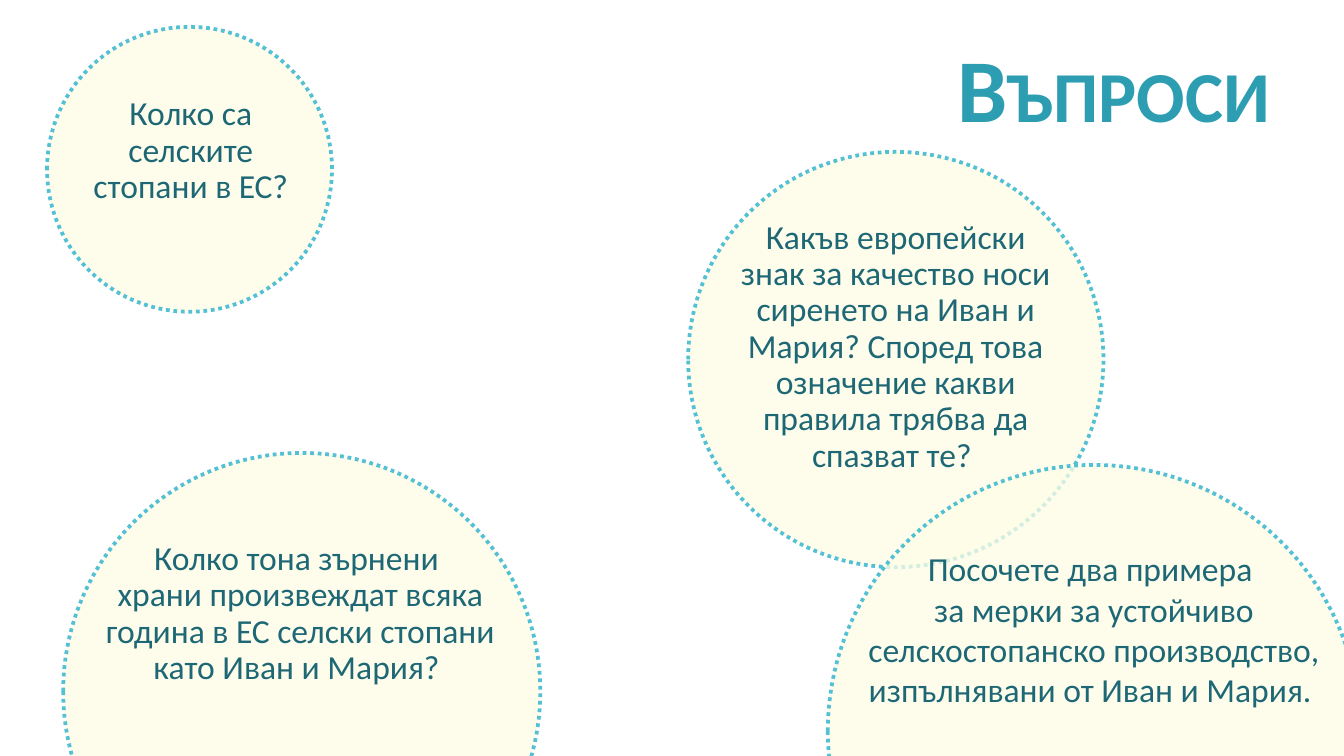
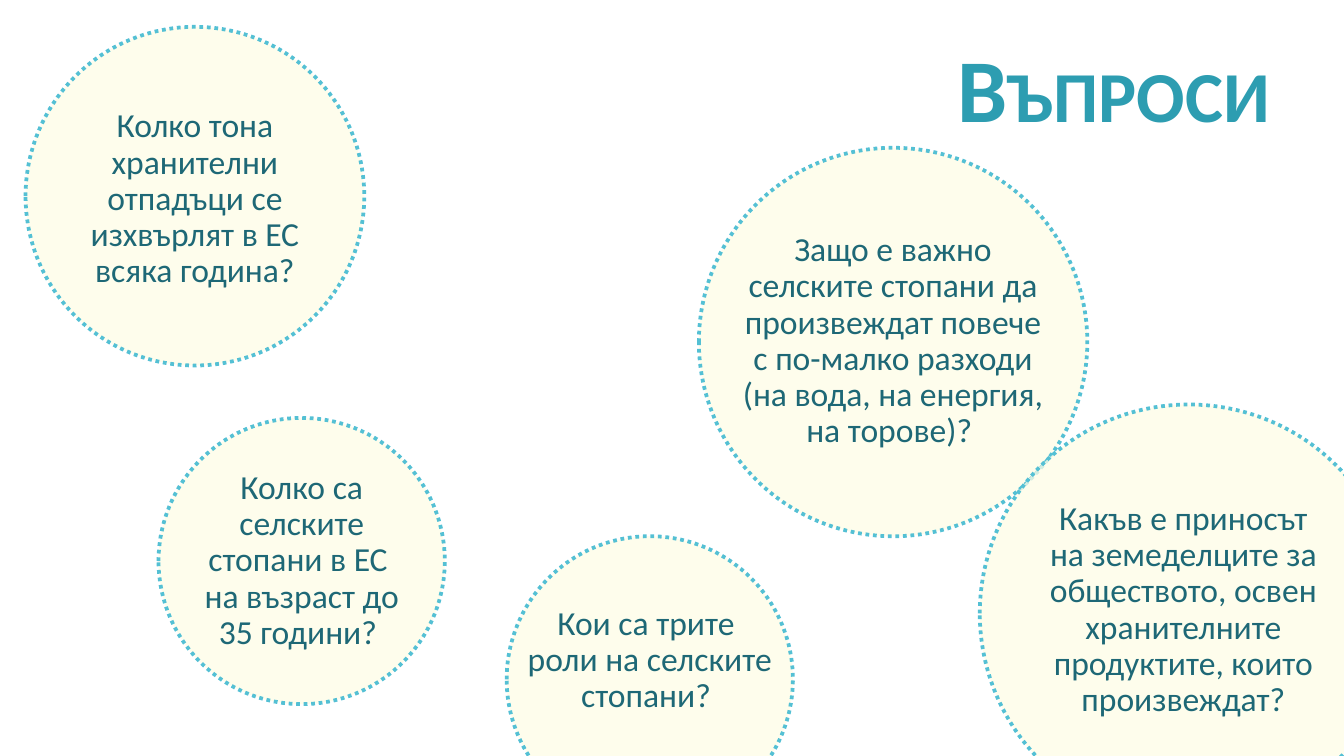
from dataclasses import dataclass

from lxml.etree import SubElement
from pptx import Presentation
from pptx.dml.color import RGBColor
from pptx.enum.dml import MSO_LINE
from pptx.enum.shapes import MSO_SHAPE
from pptx.enum.text import MSO_ANCHOR, MSO_AUTO_SIZE, PP_ALIGN
from pptx.oxml.ns import qn
from pptx.util import Inches, Pt

COLORS = {"title": "2D9DB1", "text": "1E6876", "fill": "FEFDE6", "line": "54C0D4"}
FONT = "Calibri"
TITLE = "Въпроси"
LINE_HEIGHT = 0.3  # one line of 18 pt text, in inches
INSETS = 0.1       # top and bottom inset together


@dataclass
class Bubble:
    """A round question; lengths in inches, text centred across the circle."""
    left: float
    top: float
    size: float
    text_top: float
    text_width: float
    lines: int
    text: str
    spacing: float = 0.9
    shift: float = 0


SLIDES = [
    [
        Bubble(0.47, 3.37, 3.55, 3.98, 3.17, 4,
               "Колко тона зърнени \nхрани произвеждат всяка година в ЕС "
               "селски стопани като Иван и Мария? ", shift=-0.01),
        Bubble(5.12, 1.13, 3.09, 1.59, 2.64, 7,
               "Какъв европейски знак за качество носи сиренето на Иван и Мария? "
               "Според това означение какви правила трябва да спазват те? "),
        Bubble(0.35, 0.2, 2.12, 0.67, 1.8, 3,
               "Колко са селските стопани в ЕС?", shift=0.01),
        Bubble(6.16, 3.46, 3.96, 4.03, 3.65, 4,
               "Посочете два примера \nза мерки за устойчиво селскостопанско "
               "производство, изпълнявани от Иван и Мария. ", spacing=1.0),
    ],
    [
        Bubble(0.19, 0.2, 2.52, 0.76, 2.12, 5,
               "Колко тона хранителни отпадъци се изхвърлят в ЕС всяка година?"),
        Bubble(1.18, 3.11, 2.13, 3.45, 1.91, 5,
               "Колко са селските стопани в ЕС \nна възраст до 35 години? "),
        Bubble(5.2, 1.1, 2.89, 1.68, 2.54, 6,
               "Защо е важно селските стопани да произвеждат повече с по-малко "
               "разходи (на вода, на енергия, на торове)? "),
        Bubble(3.77, 3.99, 2.13, 4.46, 2.13, 3,
               "Кои са трите \nроли на селските стопани? "),
        Bubble(7.29, 3.01, 3.11, 3.68, 2.32, 6,
               "Какъв е приносът на земеделците за обществото, освен хранителните "
               "продуктите, които произвеждат?", shift=-0.04),
    ],
]


def color(name):
    return RGBColor.from_string(COLORS[name])


def write(tf, text, size, name, align, spacing):
    tf.word_wrap = True
    p = tf.paragraphs[0]
    p.text = text
    p.alignment = align
    p.line_spacing = spacing
    for r in p.runs:
        r.font.name = FONT
        r.font.size = Pt(size)
        r.font.color.rgb = color(name)
    return p


def add_title(s):
    sp = s.shapes.title
    sp.left, sp.top, sp.width, sp.height = map(Inches, (5.53, 0.2, 4.02, 1.09))
    tf = sp.text_frame
    tf.auto_size = MSO_AUTO_SIZE.NONE
    tf.vertical_anchor = MSO_ANCHOR.MIDDLE
    r = write(tf, TITLE, 48, "title", PP_ALIGN.RIGHT, 0.7).runs[0]
    r.font.bold = True
    r.font._element.set("cap", "small")


def add_bubble(s, b):
    sp = s.shapes.add_shape(MSO_SHAPE.OVAL, *map(Inches, (b.left, b.top, b.size, b.size)))
    sp.shadow.inherit = False
    sp.fill.solid()
    sp.fill.fore_color.rgb = color("fill")
    srgb = sp.fill._xPr.find(qn("a:solidFill")).find(qn("a:srgbClr"))
    SubElement(srgb, qn("a:alpha")).set("val", "75000")
    sp.line.color.rgb = color("line")
    sp.line.width = Pt(2)
    sp.line.dash_style = MSO_LINE.ROUND_DOT

    left = b.left + (b.size - b.text_width) / 2 + b.shift
    height = b.lines * LINE_HEIGHT * b.spacing + INSETS
    box = s.shapes.add_textbox(*map(Inches, (left, b.text_top, b.text_width, height)))
    box.text_frame.auto_size = MSO_AUTO_SIZE.SHAPE_TO_FIT_TEXT
    write(box.text_frame, b.text, 18, "text", PP_ALIGN.CENTER, b.spacing)


def main():
    prs = Presentation()
    prs.slide_width = Inches(10)
    prs.slide_height = prs.slide_width * 9 // 16
    for bubbles in SLIDES:
        s = prs.slides.add_slide(prs.slide_layouts[5])
        add_title(s)
        for b in bubbles:
            add_bubble(s, b)
    prs.save("out.pptx")


if __name__ == "__main__":
    main()
